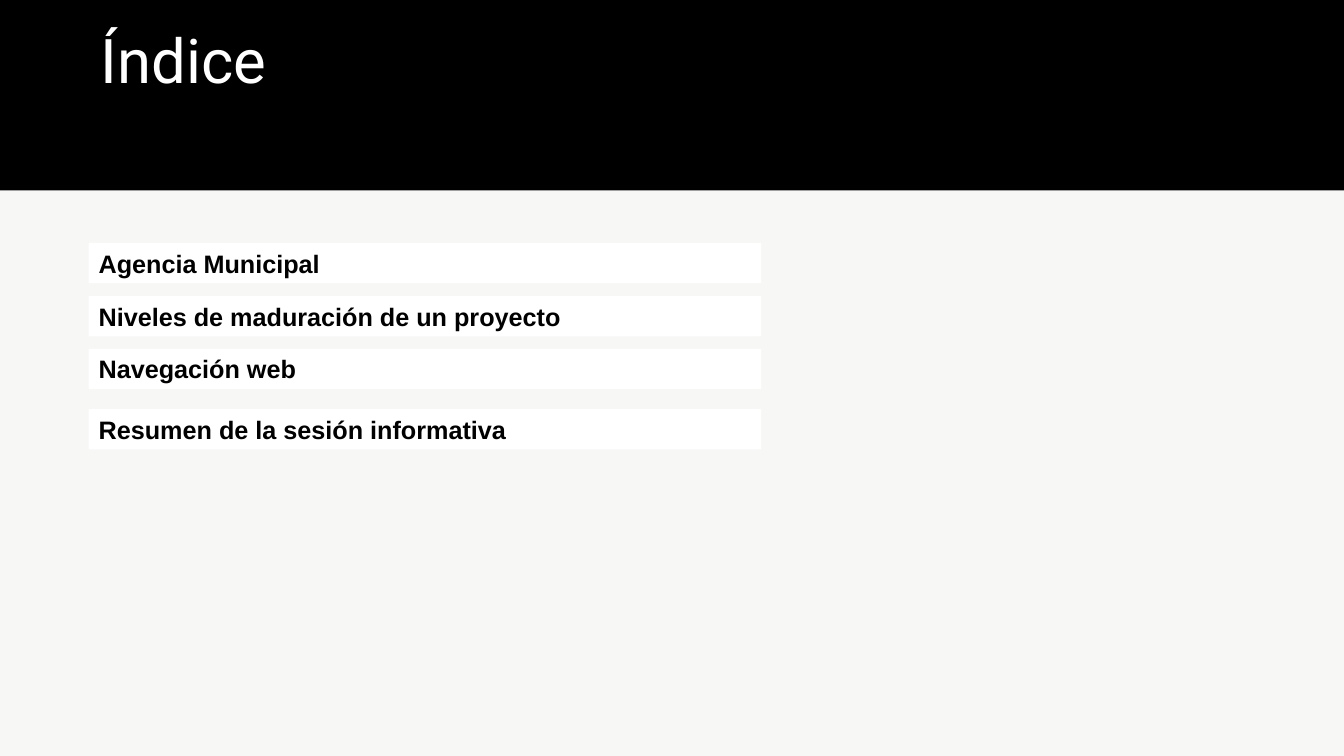
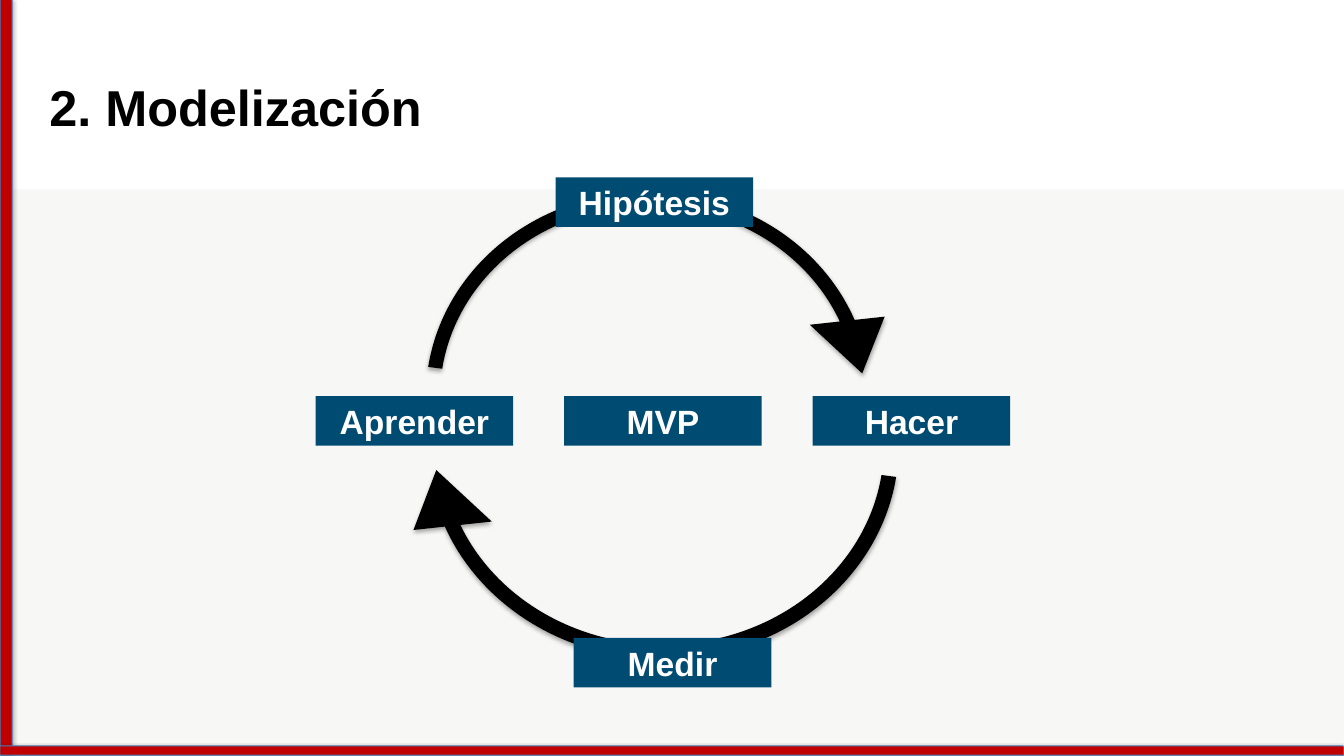
from typing import NamedTuple

from lxml import etree
from pptx import Presentation
from pptx.dml.color import RGBColor
from pptx.enum.shapes import MSO_SHAPE as Preset
from pptx.enum.text import MSO_ANCHOR as Anchor, MSO_AUTO_SIZE as AutoSize, PP_ALIGN as Align
from pptx.oxml.ns import qn
from pptx.util import Inches, Pt

BLACK, WHITE, PANEL = "000000", "FFFFFF", "F7F7F6"
RED, BLUE_EDGE, NAVY = "C00000", "4A7EBB", "004B72"
ARROW_BEND = (0.03, 8.82, 203.47, 112.61, 0.08)


class Box(NamedTuple):
    left: float
    top: float
    width: float
    height: float

    def percent(self, x, y, width, height):
        return Box(self.left + self.width * x / 100, self.top + self.height * y / 100,
                   self.width * width / 100, self.height * height / 100)

    def lengths(self):
        return [Inches(length) for length in self]


PAGE = Box(0, 0, 13.33, 7.5)


def color(hex_code):
    return RGBColor.from_string(hex_code)


def add_soft_shadow(shape):
    effects = shape.element.spPr.find(qn("a:effectLst"))
    outer = etree.SubElement(effects, qn("a:outerShdw"), blurRad="40000", dist="23000",
                             dir="5400000", rotWithShape="0")
    black = etree.SubElement(outer, qn("a:srgbClr"), val=BLACK)
    etree.SubElement(black, qn("a:alpha"), val="35000")


def add_block(slide, box, fill, preset=Preset.RECTANGLE, edge=None, shadow=False):
    block = slide.shapes.add_shape(preset, *box.lengths())
    block.shadow.inherit = False
    block.fill.solid()
    block.fill.fore_color.rgb = color(fill)
    if edge:
        block.line.color.rgb = color(edge)
        block.line.width = Pt(0.75)
    else:
        block.line.fill.background()
    if shadow:
        add_soft_shadow(block)
    return block


def write(shape, text, size, ink, font="Arial", bold=True, align=Align.LEFT,
          anchor=Anchor.TOP, insets=(0, 0, 0, 0)):
    frame = shape.text_frame
    frame.text = text
    frame.word_wrap = True
    frame.auto_size = AutoSize.NONE
    frame.vertical_anchor = anchor
    (frame.margin_left, frame.margin_top,
     frame.margin_right, frame.margin_bottom) = [Inches(inset) for inset in insets]
    paragraph = frame.paragraphs[0]
    paragraph.alignment = align
    paragraph.font.name = font
    paragraph.font.size = Pt(size)
    paragraph.font.bold = bold
    paragraph.font.color.rgb = color(ink)


def start_slide(deck, title_box, title, band=None, **style):
    slide = deck.slides.add_slide(deck.slide_layouts[5])
    add_block(slide, PAGE.percent(0, 25.07, 100, 74.93), PANEL)
    if band:
        add_block(slide, PAGE.percent(0, -0.93, 100, 26.13), band)
    heading = slide.shapes.title
    heading.left, heading.top, heading.width, heading.height = title_box.lengths()
    write(heading, title, **style)
    slide.shapes.element.append(heading.element)
    return slide


def add_index(slide, box, topics):
    for top, topic in topics:
        row = add_block(slide, box.percent(0, top, 100, 19.5), WHITE)
        write(row, topic, 18, BLACK, insets=(0.1, 0.05, 0.1, 0.05))


def add_red_edges(slide, box):
    left_edge = box.percent(-27.68, 48.93, 56.26, 1.6)
    bottom_edge = box.percent(0, 98.67, 100, 1.2)
    for edge_box, turn in ((left_edge, 270), (bottom_edge, 0)):
        edge = add_block(slide, edge_box, RED, Preset.ROUND_1_RECTANGLE, BLUE_EDGE, True)
        edge.rotation = turn


def add_cycle(slide, box):
    lower_arc = box.percent(11.47, 7.22, 77.07, 92.78)
    upper_arc = box.percent(11.47, 0, 72.86, 88.78)
    for arc_box, turn in ((lower_arc, 180), (upper_arc, 0)):
        arc = add_block(slide, arc_box, BLACK, Preset.CIRCULAR_ARROW, shadow=True)
        arc.rotation = turn
        for index, bend in enumerate(ARROW_BEND):
            arc.adjustments[index] = bend

    width, height, middle = 28.45, 9.32, 44.3
    step = (100 - width) / 2
    stages = [(name, column * step, middle)
              for column, name in enumerate(("Aprender", "MVP", "Hacer"))]
    stages += [("Medir", 37.16, 89.92), ("Hipótesis", 34.54, 3.04)]
    for name, x, y in stages:
        stage = add_block(slide, box.percent(x, y, width, height), NAVY)
        write(stage, name, 24, WHITE, align=Align.CENTER, anchor=Anchor.MIDDLE)
        stage.text_frame.paragraphs[0].space_after = Pt(6)


def build_index_slide(deck):
    slide = start_slide(deck, PAGE.percent(7.5, 2.93, 80, 10), "Índice", band=BLACK,
                        size=44, ink=WHITE, font="Roboto", bold=False)
    add_index(slide, PAGE.percent(6.6, 32.13, 50.03, 27.33), (
        (0, "Agencia Municipal"),
        (25.75, "Niveles de maduración de un proyecto"),
        (51.25, "Navegación web"),
        (80.5, "Resumen de la sesión informativa"),
    ))


def build_cycle_slide(deck):
    slide = start_slide(deck, PAGE.percent(3.68, 9.33, 66.77, 10.13), "2. Modelización",
                        size=36, ink=BLACK, insets=(0, 0.06, 0, 0))
    add_red_edges(slide, PAGE)
    add_cycle(slide, PAGE.percent(23.48, 21.33, 51.69, 70.13))


def main():
    deck = Presentation()
    deck.slide_width, deck.slide_height = Inches(PAGE.width), Inches(PAGE.height)
    build_index_slide(deck)
    build_cycle_slide(deck)
    deck.save("out.pptx")


if __name__ == "__main__":
    main()
